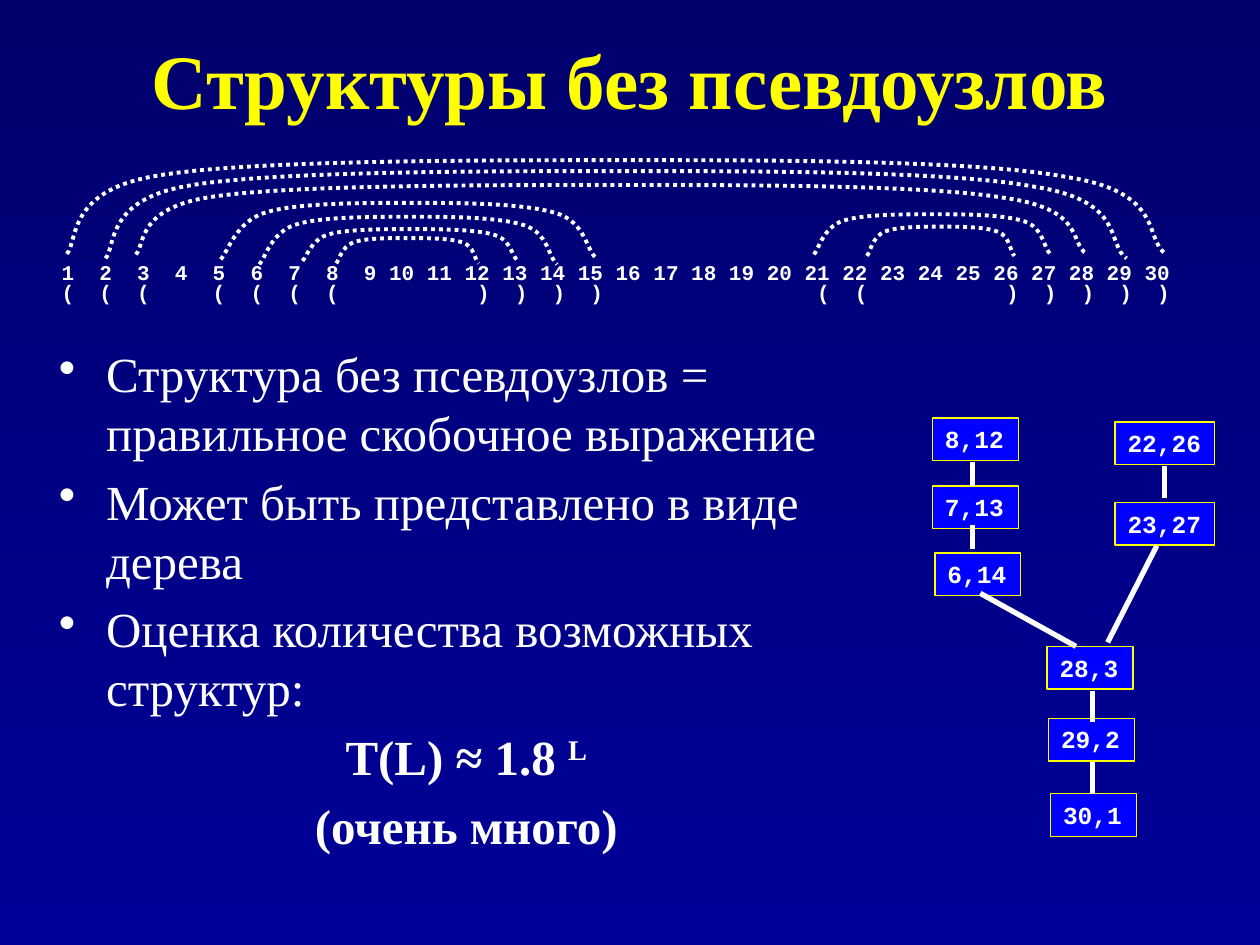
from dataclasses import dataclass
from lxml.etree import SubElement
from pptx import Presentation
from pptx.dml.color import RGBColor as Rgb
from pptx.enum.dml import MSO_LINE_DASH_STYLE as Dash
from pptx.enum.shapes import MSO_CONNECTOR as Connector, MSO_SHAPE as Shape
from pptx.enum.text import MSO_ANCHOR as Anchor, MSO_AUTO_SIZE as AutoSize, PP_ALIGN as Align
from pptx.oxml.ns import qn
from pptx.util import Cm, Pt


@dataclass(frozen=True)
class Theme:
    sky_top: str = "00006D"
    sky_bottom: str = "000099"
    heading: str = "FFFF00"
    ink: str = "FFFFFF"
    node: str = "0000FF"
    serif: str = "Times New Roman"
    mono: str = "Courier New"
    title_size: int = 44
    body_size: int = 28
    node_size: int = 14
    sequence_size: int = 12


def write(paragraph, text, *, font, size, color, bold=False, align=None, superscript=False):
    run = paragraph.add_run()
    run.text = text
    run.font.name, run.font.size, run.font.bold = font, Pt(size), bold
    run.font.color.rgb = Rgb.from_string(color)
    if align is not None:
        paragraph.alignment = align
    if superscript:
        run._r.get_or_add_rPr().set("baseline", "30000")


class Sheet:
    # Arc outline as fractions of its width and height
    NARROW = (0, .02, .04, .12, .2, .38, .5, .63, .8, .89, .97, .97, 1)
    WIDE = (0, .01, 0, .08, .16, .37, .51, .64, .83, .91, 1, .98, 1)
    RISE = (0, .14, .67, .83, 1, 1, 1, 1, 1, .82, .66, .16, 0)

    def __init__(self, slide, theme):
        self.slide, self.theme, self.shapes = slide, theme, slide.shapes

    def background(self):
        fill = self.slide.background.fill
        fill.gradient()
        fill.gradient_angle = 270
        colors = (self.theme.sky_top, self.theme.sky_bottom)
        for stop, color, position in zip(fill.gradient_stops, colors, (0, 1)):
            stop.color.rgb, stop.position = Rgb.from_string(color), position

    def text_frame(self, left, top, width, height, wrap=True):
        frame = self.shapes.add_textbox(Cm(left), Cm(top), Cm(width), Cm(height)).text_frame
        frame.word_wrap = wrap
        return frame

    def bullet(self, paragraph, marked):
        props = paragraph._p.get_or_add_pPr()
        paragraph.space_before = Pt(0.2 * self.theme.body_size)
        props.set("marL", str(Cm(0.95)))
        props.set("indent", str(Cm(-0.95)))
        if marked:
            SubElement(props, qn("a:buChar")).set("char", "•")
        else:
            SubElement(props, qn("a:buNone"))

    def arc(self, left, right, top, base):
        xs = self.WIDE if right - left > 15 else self.NARROW
        points = [(Cm(left + x * (right - left)), Cm(base - y * (base - top)))
                  for x, y in zip(xs, self.RISE)]
        builder = self.shapes.build_freeform(*points[0])
        builder.add_line_segments(points[1:], close=False)
        arc = builder.convert_to_shape()
        arc.fill.background()
        arc.shadow.inherit = False
        arc.line.color.rgb = Rgb.from_string(self.theme.ink)
        arc.line.width, arc.line.dash_style = Pt(2.25), Dash.ROUND_DOT
        # Every three segment ends become the points of one Bezier curve
        outline = arc._element.find(".//" + qn("a:path"))
        segments = outline.findall(qn("a:lnTo"))
        for first in range(0, len(segments), 3):
            curve = SubElement(outline, qn("a:cubicBezTo"))
            for segment in segments[first:first + 3]:
                curve.append(segment[0])
                outline.remove(segment)

    def node(self, label, left, top):
        width = 1.73 if len(label) == 4 else 2.01
        box = self.shapes.add_shape(Shape.RECTANGLE, Cm(left), Cm(top), Cm(width), Cm(0.86))
        box.shadow.inherit = False
        box.fill.solid()
        box.fill.fore_color.rgb = Rgb.from_string(self.theme.node)
        box.line.color.rgb = Rgb.from_string(self.theme.heading)
        box.line.width = Pt(0.75)
        frame = box.text_frame
        frame.word_wrap, frame.auto_size = False, AutoSize.SHAPE_TO_FIT_TEXT
        frame.vertical_anchor = Anchor.TOP
        write(frame.paragraphs[0], label, font=self.theme.mono, size=self.theme.node_size,
              color=self.theme.ink, bold=True, align=Align.LEFT)

    def edge(self, *ends):
        line = self.shapes.add_connector(Connector.STRAIGHT, *map(Cm, ends))
        line.line.color.rgb = Rgb.from_string(self.theme.ink)
        line.line.width = Pt(3)
        SubElement(line._element.spPr, qn("a:effectLst"))


# Base pairs: (opening, closing) -> left, right, top and base of the arc
PAIRS = {
    (8, 12): (6.78, 9.65, 4.8, 5.31),
    (6, 14): (5.23, 11.23, 4.37, 5.33),
    (5, 15): (4.45, 12.04, 4.09, 5.23),
    (7, 13): (6.1, 10.44, 4.62, 5.26),
    (21, 27): (16.41, 21.18, 4.32, 5.13),
    (22, 26): (17.48, 20.45, 4.57, 5.16),
    (1, 30): (1.35, 23.5, 3.23, 5.12),
    (2, 29): (2.13, 22.71, 3.45, 5.21),
    (3, 28): (2.74, 21.92, 3.73, 5.13),
}
NODES = {
    "28,3": (21.11, 13.03), "22,26": (22.48, 8.51), "8,12": (18.8, 8.43),
    "23,27": (22.48, 10.13), "6,14": (18.85, 11.15), "7,13": (18.8, 9.8),
    "29,2": (21.14, 14.48), "30,1": (21.18, 16),
}
EDGES = [
    (22.02, 15.37, 22.02, 16), (22.02, 13.92, 22.02, 14.55),
    (23.47, 9.4, 23.47, 10.03), (19.61, 9.32, 19.61, 9.8),
    (19.61, 10.59, 19.61, 11.07), (23.32, 11, 22.33, 12.95),
    (19.76, 11.96, 21.69, 13.03),
]
POINTS = [
    "Структура без псевдоузлов = правильное скобочное выражение",
    "Может быть представлено в виде дерева",
    "Оценка количества возможных структур:",
]


def main():
    deck = Presentation()
    deck.slide_width, deck.slide_height = Cm(25.4), Cm(19.05)
    theme = Theme()
    sheet = Sheet(deck.slides.add_slide(deck.slide_layouts[6]), theme)
    sheet.background()

    # Title
    title = sheet.text_frame(0, 0, 25.4, 3.18)
    title.vertical_anchor = Anchor.MIDDLE
    write(title.paragraphs[0], "Структуры без псевдоузлов", font=theme.serif,
          size=theme.title_size, color=theme.heading, bold=True, align=Align.CENTER)

    # Statements and estimate
    body = sheet.text_frame(0.94, 6.81, 16.92, 11.35)
    style = dict(font=theme.serif, size=theme.body_size, color=theme.ink)
    strong = dict(style, bold=True, align=Align.CENTER)
    paragraphs = body.paragraphs + tuple(body.add_paragraph() for _ in range(4))
    for index, paragraph in enumerate(paragraphs):
        sheet.bullet(paragraph, marked=index < len(POINTS))
    for paragraph, point in zip(paragraphs, POINTS):
        write(paragraph, point, **style)
    estimate, remark = paragraphs[-2:]
    write(estimate, "T(L) ≈ 1.8 ", **strong)
    write(estimate, "L", superscript=True, **strong)
    write(remark, "(очень много)", **strong)

    # Numbered positions with their brackets
    brackets = {n: mark for pair in PAIRS for n, mark in zip(pair, "()")}
    positions = range(1, 31)
    rows = [positions, [brackets.get(n, "") for n in positions]]
    sequence = sheet.text_frame(0.74, 5.21, 23.27, 1.07, wrap=False)
    sequence.auto_size = AutoSize.SHAPE_TO_FIT_TEXT
    for paragraph, row in zip((sequence.paragraphs[0], sequence.add_paragraph()), rows):
        paragraph.line_spacing = 0.8
        write(paragraph, " ".join(f"{cell:>2}" for cell in row), font=theme.mono,
              size=theme.sequence_size, color=theme.ink, bold=True)

    # Arcs joining the pairs
    for extent in PAIRS.values():
        sheet.arc(*extent)

    # Tree of pairs
    for label, corner in NODES.items():
        sheet.node(label, *corner)
    for ends in EDGES:
        sheet.edge(*ends)

    deck.save("out.pptx")


if __name__ == "__main__":
    main()
